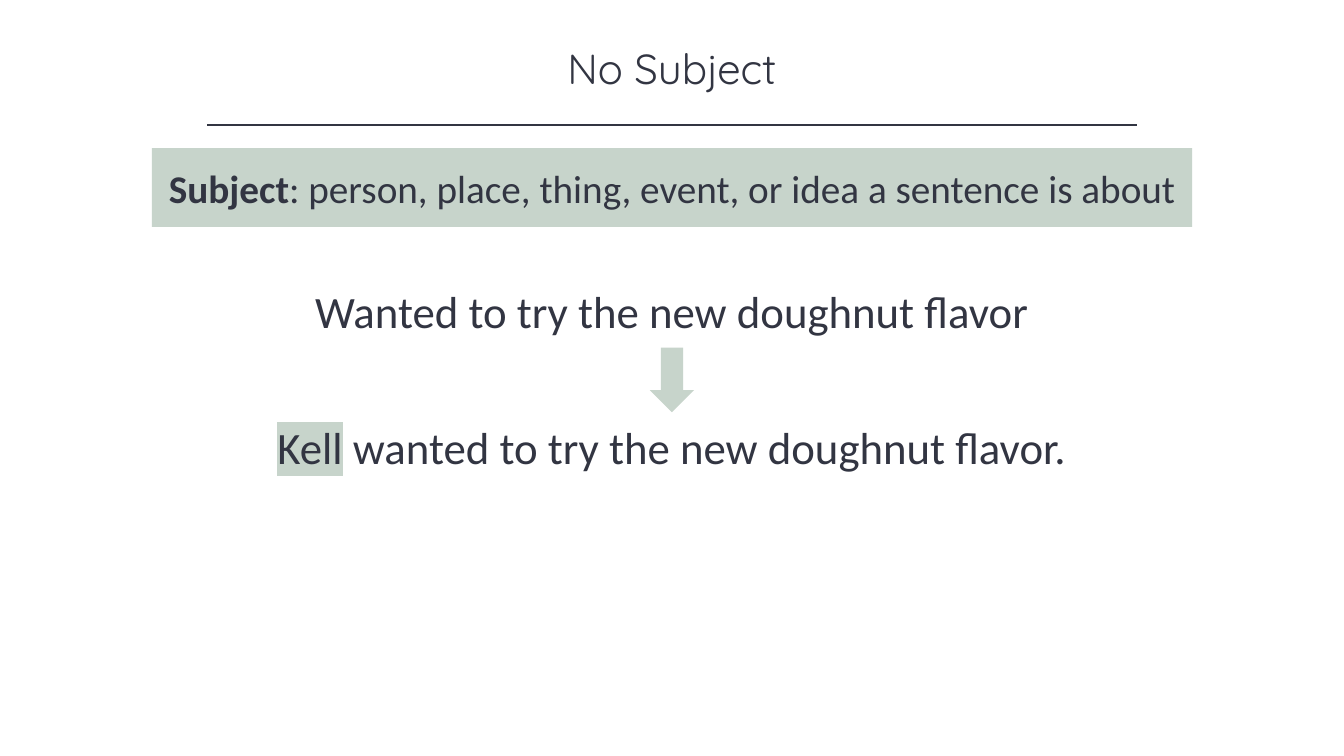
"""Build the "No Subject" grammar slide."""
from lxml.etree import SubElement
from pptx import Presentation
from pptx.dml.color import RGBColor
from pptx.enum.shapes import MSO_CONNECTOR as Line, MSO_SHAPE as Shape
from pptx.enum.text import MSO_ANCHOR as Anchor, PP_ALIGN as Align
from pptx.oxml import parse_xml
from pptx.oxml.ns import nsdecls, qn
from pptx.util import Inches, Pt

COLORS = {"ink": "323542", "sage": "C7D4CB"}
WIDTH, HEIGHT = 13.33, 7.5

TITLE = [("No Subject", {})]
DEFINITION = [("Subject", {"bold": True}),
              (": person, place, thing, event, or idea a sentence is about", {})]
SENTENCES = [
    (2.76, 7.54, [("Wanted to try the new doughnut flavor", {})]),
    (4.11, 8.28, [("Kell", {"highlight": "sage"}),
                  (" wanted to try the new doughnut flavor.", {})]),
]


def rgb(name):
    return RGBColor.from_string(COLORS[name])


def centered(top, width, height):
    return [Inches(v) for v in ((WIDTH - width) / 2, top, width, height)]


def write(sp, runs, size, font="Calibri", anchor=Anchor.MIDDLE, after=0):
    tf = sp.text_frame
    tf.word_wrap = True
    tf.vertical_anchor = anchor
    p = tf.paragraphs[0]
    p.alignment = Align.CENTER
    p.space_after = Pt(after)
    for text, style in runs:
        r = p.add_run()
        r.text = text
        r.font.name, r.font.size = font, Pt(size)
        r.font.bold = style.get("bold", False)
        r.font.color.rgb = rgb("ink")
        if "highlight" in style:
            mark = parse_xml(f'<a:highlight {nsdecls("a")}><a:srgbClr '
                             f'val="{COLORS[style["highlight"]]}"/></a:highlight>')
            r.font.fill  
            r._r.rPr.find(qn("a:solidFill")).addnext(mark)


def add_block(s, kind, top, width, height):
    sp = s.shapes.add_shape(kind, *centered(top, width, height))
    sp.shadow.inherit = False
    sp.fill.solid()
    sp.fill.fore_color.rgb = rgb("sage")
    sp.line.fill.background()
    return sp


def main():
    prs = Presentation()
    prs.slide_width, prs.slide_height = Inches(WIDTH), Inches(HEIGHT)
    s = prs.slides.add_slide(prs.slide_layouts[5])

    title = s.shapes.title
    title.left, title.top, title.width, title.height = centered(0.37, 10, 0.61)
    write(title, TITLE, 30, font="Quicksand", anchor=Anchor.TOP)

    left, top, width, _ = centered(1.24, 9.22, 0)
    rule = s.shapes.add_connector(Line.STRAIGHT, left, top, left + width, top)
    rule.line.color.rgb = rgb("ink")
    rule.line.width = Pt(1)
    SubElement(rule._element.spPr, qn("a:effectLst"))

    write(add_block(s, Shape.RECTANGLE, 1.47, 10.32, 0.78), DEFINITION, 28)
    for top, width, runs in SENTENCES:
        box = s.shapes.add_textbox(*centered(top, width, 0.64))
        write(box, runs, 32, after=18)
    add_block(s, Shape.DOWN_ARROW, 3.45, 0.44, 0.64)

    prs.save("out.pptx")


if __name__ == "__main__":
    main()
